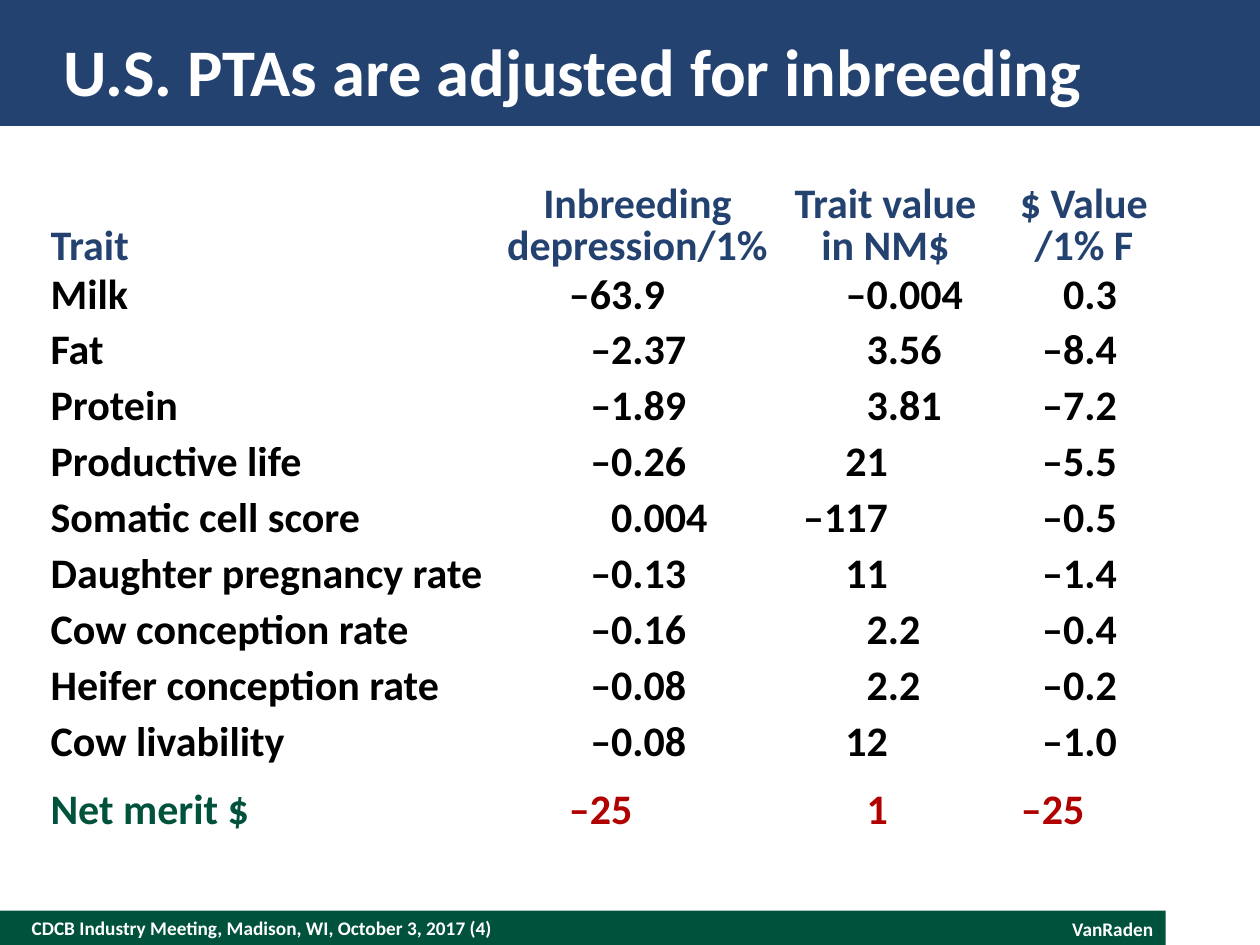
from dataclasses import dataclass

from lxml import etree
from pptx import Presentation
from pptx import util as u
from pptx.dml.color import RGBColor
from pptx.enum import shapes, text
from pptx.oxml.ns import qn


@dataclass(frozen=True)
class Theme:
    font: str = "Calibri"
    navy: str = "244270"
    green: str = "00523C"
    red: str = "B00000"
    black: str = "000000"
    white: str = "FFFFFF"
    title_size: int = 38
    table_size: int = 24
    footer_size: int = 11


COLUMN_WIDTHS = (9.19, 5.28, 4.47, 3.78)
DECIMAL_TABS = (None, 2.54, 2.41, 1.9)
HEADINGS = ("Trait", "Inbreeding depression/1%", "Trait value\nin NM$", "$ Value\n/1% F")
TRAITS = (
    ("Milk", "–63.9", "–0.004", "0.3"),
    ("Fat", "–2.37", "3.56", "–8.4"),
    ("Protein", "–1.89", "3.81", "–7.2"),
    ("Productive life", "–0.26", "21", "–5.5"),
    ("Somatic cell score", "0.004", "–117", "–0.5"),
    ("Daughter pregnancy rate", "–0.13", "11", "–1.4"),
    ("Cow conception rate", "–0.16", "2.2", "–0.4"),
    ("Heifer conception rate", "–0.08", "2.2", "–0.2"),
    ("Cow livability", "–0.08", "12", "–1.0"),
)
NET_MERIT = ("Net merit $", "–25", "1", "–25")


class SlideBuilder:
    """Holds the theme and the page being filled."""

    def __init__(self, page, theme):
        self.page = page
        self.theme = theme

    def style(self, frame, size, color, align=text.PP_ALIGN.LEFT):
        for para in frame.paragraphs:
            para.alignment = align
            for span in para.runs:
                span.font.name = self.theme.font
                span.font.size = u.Pt(size)
                span.font.bold = True
                span.font.color.rgb = RGBColor.from_string(color)

    def inset(self, target, left=0, top=0, right=0, bottom=0):
        target.margin_left, target.margin_top = u.Cm(left), u.Cm(top)
        target.margin_right, target.margin_bottom = u.Cm(right), u.Cm(bottom)

    def bar(self, left, top, width, height, color):
        bar = self.page.shapes.add_shape(
            shapes.MSO_SHAPE.RECTANGLE, u.Cm(left), u.Cm(top), u.Cm(width), u.Cm(height))
        bar.shadow.inherit = False
        bar.fill.solid()
        bar.fill.fore_color.rgb = RGBColor.from_string(color)
        bar.line.fill.background()

    def title(self, words, left, top, width, height):
        """Fill the title placeholder and lift it above the bars."""
        title = self.page.shapes.title
        title.element.getparent().append(title.element)
        title.left, title.top = u.Cm(left), u.Cm(top)
        title.width, title.height = u.Cm(width), u.Cm(height)
        frame = title.text_frame
        frame.text = words
        frame.auto_size = text.MSO_AUTO_SIZE.NONE
        frame.vertical_anchor = text.MSO_ANCHOR.MIDDLE
        self.inset(frame)
        self.style(frame, self.theme.title_size, self.theme.white)

    def footer(self, words, left, top, width, height, align, side=0):
        box = self.page.shapes.add_textbox(u.Cm(left), u.Cm(top), u.Cm(width), u.Cm(height))
        frame = box.text_frame
        frame.word_wrap = True
        frame.text = words
        frame.vertical_anchor = text.MSO_ANCHOR.MIDDLE
        self.inset(frame, left=side, right=side)
        self.style(frame, self.theme.footer_size, self.theme.white, align)

    def table(self, left, top, widths, heights):
        frame = self.page.shapes.add_table(
            len(heights), len(widths), u.Cm(left), u.Cm(top),
            u.Cm(sum(widths)), u.Cm(sum(heights)))
        table = frame.table
        table.first_row = table.horz_banding = False
        for column, width in zip(table.columns, widths):
            column.width = u.Cm(width)
        for row, height in zip(table.rows, heights):
            row.height = u.Cm(height)
        return table

    def cell(self, cell, words, color, align=text.PP_ALIGN.LEFT, tab=None, left=0, top=0):
        """Write a cell; a tab position lines its number up on the decimal point."""
        cell.fill.background()
        self.inset(cell, left=left, top=top)
        frame = cell.text_frame
        frame.text = words if tab is None else "\t" + words
        for para in frame.paragraphs:
            para.line_spacing = u.Pt(self.theme.table_size)
            if tab is not None:
                stops = etree.SubElement(para._p.get_or_add_pPr(), qn("a:tabLst"))
                etree.SubElement(stops, qn("a:tab"), pos=str(u.Cm(tab)), algn="dec")
        self.style(frame, self.theme.table_size, color, align)

    def heading_row(self, table):
        for column, words in enumerate(HEADINGS):
            cell = table.cell(0, column)
            align = text.PP_ALIGN.CENTER if column else text.PP_ALIGN.LEFT
            self.cell(cell, words, self.theme.navy, align, left=0.25 if column == 2 else 0)
            cell.vertical_anchor = text.MSO_ANCHOR.BOTTOM

    def value_row(self, table, row, values, label_color, value_color, top=0):
        for column, (words, tab) in enumerate(zip(values, DECIMAL_TABS)):
            color = value_color if column else label_color
            self.cell(table.cell(row, column), words, color, tab=tab, top=top)


def main():
    deck = Presentation()
    deck.slide_width, deck.slide_height = u.Cm(25.4), u.Cm(19.05)
    theme = Theme()
    page = deck.slides.add_slide(deck.slide_layouts.get_by_name("Title Only"))
    builder = SlideBuilder(page, theme)

    builder.bar(0, 18.36, 23.5, 0.69, theme.green)
    builder.bar(0, 0, 25.4, 2.54, theme.navy)
    builder.footer("CDCB Industry Meeting, Madison, WI, October 3, 2017 (4)",
                   0.64, 18.36, 17.78, 0.69, text.PP_ALIGN.LEFT)
    builder.footer("VanRaden", 18.42, 18.36, 5.08, 0.73, text.PP_ALIGN.RIGHT, side=0.25)
    builder.title("U.S. PTAs are adjusted for inbreeding", 1.27, 0.51, 22.86, 1.78)

    heights = (2.44, 1.24) + (1.13,) * (len(TRAITS) - 1) + (1.37,)
    table = builder.table(1.02, 3.05, COLUMN_WIDTHS, heights)
    builder.heading_row(table)
    for row, values in enumerate(TRAITS, start=1):
        builder.value_row(table, row, values, theme.black, theme.black,
                          top=0.13 if row == 1 else 0)
    builder.value_row(table, len(TRAITS) + 1, NET_MERIT, theme.green, theme.red, top=0.25)

    deck.save("out.pptx")


if __name__ == "__main__":
    main()
